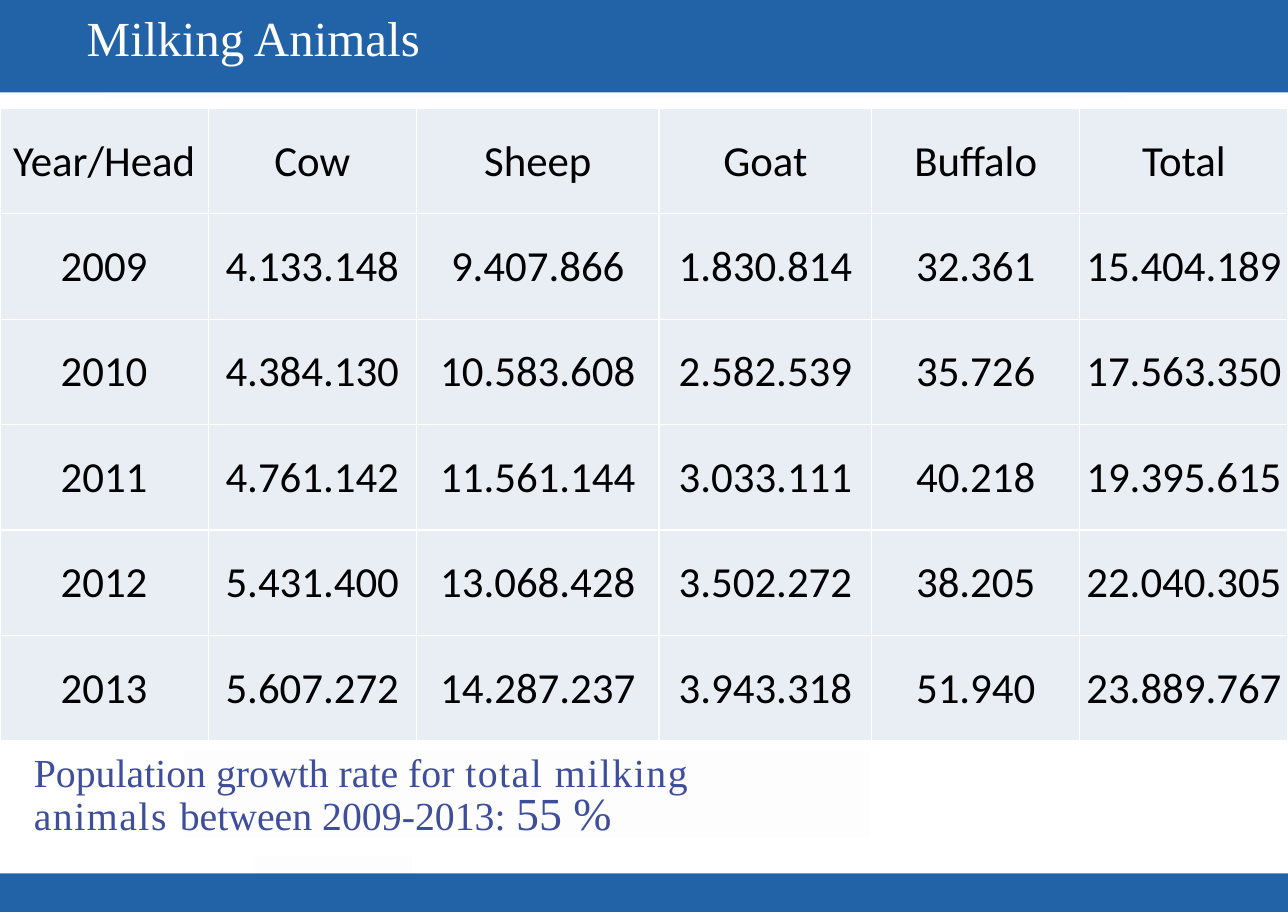
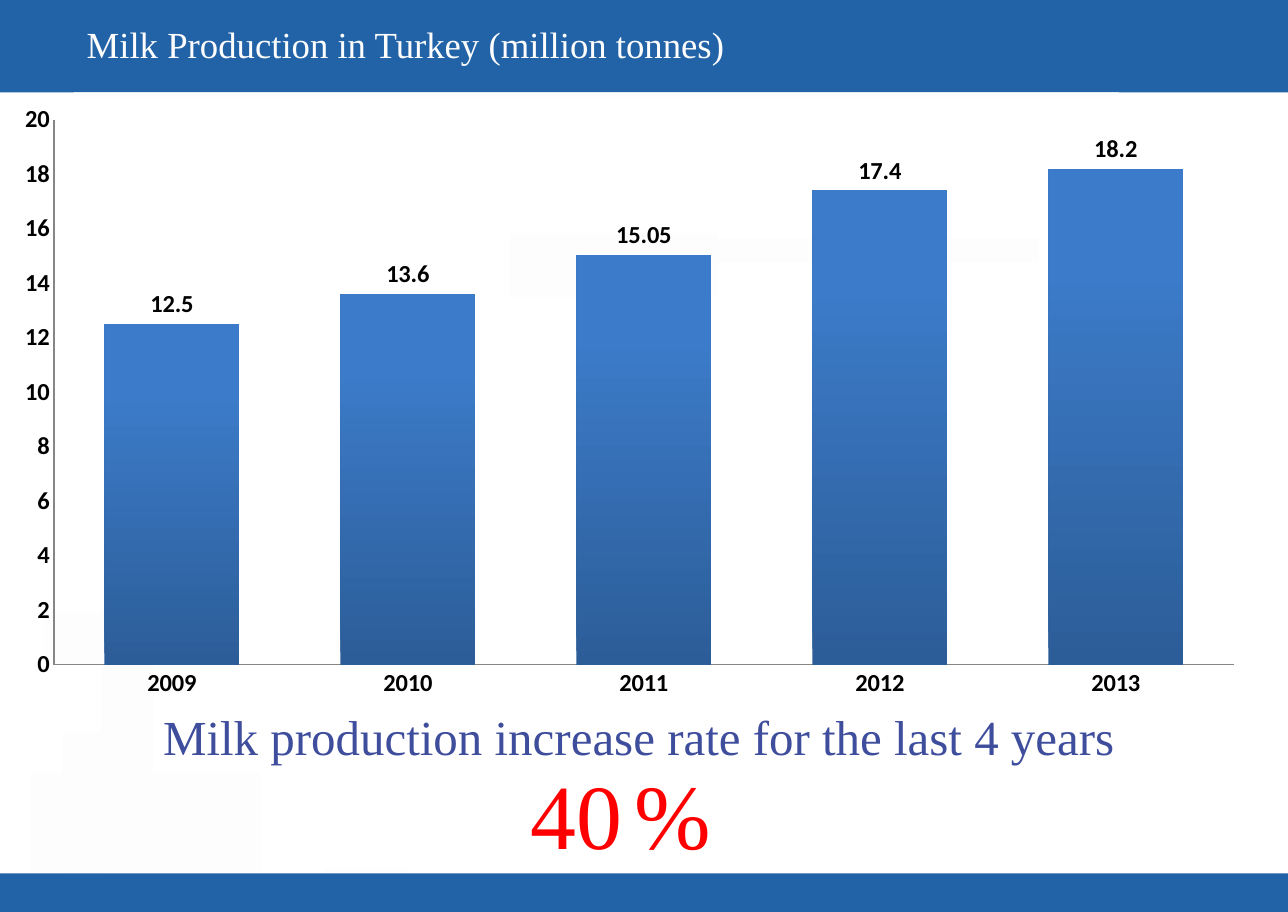
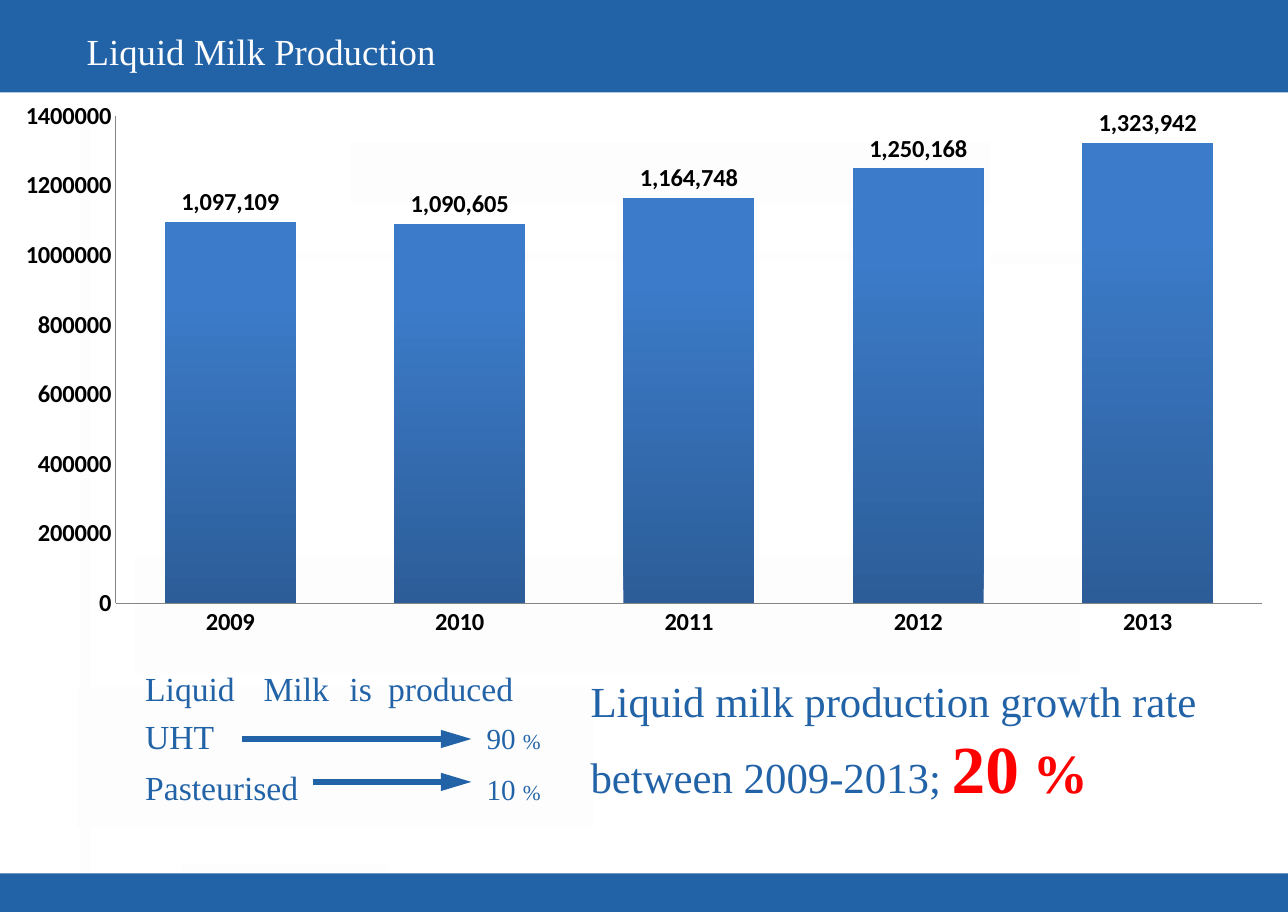
from lxml import etree
from pptx import Presentation
from pptx.chart.data import CategoryChartData
from pptx.dml.color import RGBColor
from pptx.enum.chart import XL_CHART_TYPE, XL_LABEL_POSITION, XL_TICK_MARK
from pptx.enum.shapes import MSO_CONNECTOR, MSO_SHAPE
from pptx.enum.text import MSO_ANCHOR, PP_ALIGN
from pptx.oxml.ns import qn
from pptx.util import Cm, Emu, Pt

RECTANGLE = MSO_SHAPE.RECTANGLE
STRAIGHT = MSO_CONNECTOR.STRAIGHT
COLUMNS = XL_CHART_TYPE.COLUMN_CLUSTERED
OUTSIDE_END = XL_LABEL_POSITION.OUTSIDE_END
NO_TICK = XL_TICK_MARK.NONE
TOP, MIDDLE = MSO_ANCHOR.TOP, MSO_ANCHOR.MIDDLE
LEFT, CENTER = PP_ALIGN.LEFT, PP_ALIGN.CENTER

BLUE = RGBColor(0x22, 0x63, 0xA7)
INDIGO = RGBColor(0x3E, 0x4D, 0x9C)
RED = RGBColor(0xFF, 0x00, 0x00)
BLACK = RGBColor(0x00, 0x00, 0x00)
OFF_WHITE = RGBColor(0xFD, 0xFD, 0xFD)
CELL = RGBColor(0xE9, 0xED, 0xF4)
AXIS = RGBColor(0x86, 0x86, 0x86)
BAR_DARK = RGBColor(0x2C, 0x5D, 0x98)
BAR_LIGHT = RGBColor(0x3C, 0x7B, 0xC9)

SERIF = "Times New Roman"
SANS = "Calibri"
WIDTH, HEIGHT = 29.7, 21.03
HEADER, FOOTER = 2.13, 0.89
YEARS = ["2009", "2010", "2011", "2012", "2013"]

HERD = [
    ["Year/Head", "Cow", "Sheep", "Goat", "Buffalo", "Total"],
    ["2009", "4.133.148", "9.407.866", "1.830.814", "32.361", "15.404.189"],
    ["2010", "4.384.130", "10.583.608", "2.582.539", "35.726", "17.563.350"],
    ["2011", "4.761.142", "11.561.144", "3.033.111", "40.218", "19.395.615"],
    ["2012", "5.431.400", "13.068.428", "3.502.272", "38.205", "22.040.305"],
    ["2013", "5.607.272", "14.287.237", "3.943.318", "51.940", "23.889.767"],
]
HERD_WIDTHS = [4.8, 4.8, 5.6, 4.9, 4.8, 4.8]

HERD_PATCHES = [
    (2.45, 2.17, 23.5, 0.1), (4.26, 17.32, 15.77, 2.01),
    (5.89, 19.74, 3.61, 0.38),
]
MILK_PATCHES = [
    (1.7, 2.13, 24.1, 0.1), (1.45, 16.87, 0.89, 3.25),
    (7.47, 20.04, 1.96, 0.08), (3.53, 17.83, 2.49, 2.29),
    (0.71, 17.83, 1.63, 2.29), (1.02, 14.12, 1.32, 1.19),
    (2.34, 14.05, 1.19, 6.07), (16.54, 5.49, 7.42, 0.56),
    (11.76, 5.38, 4.78, 1.47),
]
LIQUID_PATCHES = [
    (6.81, 5.82, 14.63, 0.2), (8.1, 3.28, 14.73, 1.42),
    (22.86, 5.82, 4.93, 0.25), (1.85, 2.49, 0.25, 13.36),
    (1.85, 19.08, 0.25, 1.04), (4.19, 19.94, 4.75, 0.18),
    (3.12, 12.83, 21.77, 2.69), (1.78, 15.85, 11.89, 3.23),
]


def lengths(*values):
    return [Cm(value) for value in values]


def add_block(page, area, color):
    box = page.shapes.add_shape(RECTANGLE, *lengths(*area))
    box.shadow.inherit = False
    box.fill.solid()
    box.fill.fore_color.rgb = color
    box.line.fill.background()
    return box


def add_bands(page, layout):
    areas = [(0, 0, WIDTH, HEADER), (0, HEIGHT - FOOTER, WIDTH, FOOTER)]
    for number, area in enumerate(areas):
        band = add_block(page, area, BLUE).element
        band.nvSpPr.cNvPr.set("id", str(21 + number))
        layout.shapes.element.insert(2 + number, band)


def style_font(font, name, size, color, bold=False):
    font.name = name
    font.size = Pt(size)
    font.bold = bold
    font.color.rgb = color


def add_span(para, text, size, color, bold=False, tracking=0):
    span = para.add_run()
    span.text = text
    style_font(span.font, SERIF, size, color, bold)
    if tracking:
        span.font._element.set("spc", str(tracking * 100))


def prepare_frame(frame):
    frame.word_wrap = True
    frame.vertical_anchor = TOP
    frame.margin_left = frame.margin_right = 0
    frame.margin_top = frame.margin_bottom = 0


def add_text(page, area, paragraphs, line, gaps=(), indents=(), tabs=()):
    box = page.shapes.add_textbox(*lengths(*area))
    frame = box.text_frame
    prepare_frame(frame)
    for index, spans in enumerate(paragraphs):
        para = frame.paragraphs[0] if index == 0 else frame.add_paragraph()
        para.line_spacing = Pt(line)
        if gaps:
            para.space_before = Pt(gaps[index])
        for values in spans:
            add_span(para, *values)
        properties = para._p.get_or_add_pPr()
        if indents:
            properties.set("marL", str(Cm(indents[index])))
        if tabs:
            stops = etree.SubElement(properties, qn("a:tabLst"))
            for stop in tabs[index]:
                etree.SubElement(stops, qn("a:tab"), pos=str(Cm(stop)), algn="l")


def add_page(deck, layout, title, size, top, patches):
    page = deck.slides.add_slide(layout)
    for patch in patches:
        add_block(page, patch, OFF_WHITE)
    holder = page.shapes.title
    page.shapes.element.append(holder.element)
    holder.left, holder.top, holder.width, holder.height = lengths(2, top, 20, 1)
    prepare_frame(holder.text_frame)
    para = holder.text_frame.paragraphs[0]
    para.alignment = LEFT
    para.line_spacing = Pt(26)
    add_span(para, title, size, OFF_WHITE)
    return page


def add_borders(cell):
    properties = cell._tc.get_or_add_tcPr()
    for side in ("a:lnL", "a:lnR", "a:lnT", "a:lnB"):
        line = etree.SubElement(properties, qn(side), w=str(Pt(1)))
        fill = etree.SubElement(line, qn("a:solidFill"))
        etree.SubElement(fill, qn("a:srgbClr"), val="FFFFFF")


def add_herd_table(page):
    row_height = 2.43
    area = lengths(0, 2.5, WIDTH, row_height * len(HERD))
    table = page.shapes.add_table(len(HERD), len(HERD[0]), *area).table
    table.first_row = table.horz_banding = False
    for column, width in zip(table.columns, HERD_WIDTHS):
        column.width = Cm(width)
    for row, texts in zip(table.rows, HERD):
        row.height = Cm(row_height)
        for cell, text in zip(row.cells, texts):
            add_borders(cell)
            cell.fill.solid()
            cell.fill.fore_color.rgb = CELL
            cell.vertical_anchor = MIDDLE
            cell.margin_left = cell.margin_right = cell.margin_top = Cm(0.02)
            cell.margin_bottom = Emu(0)
            para = cell.text_frame.paragraphs[0]
            para.alignment = CENTER
            span = para.add_run()
            span.text = text
            style_font(span.font, SANS, 28, BLACK)


def add_columns(page, area, values, label_format):
    data = CategoryChartData()
    data.categories = YEARS
    data.add_series("Series 1", values)
    chart = page.shapes.add_chart(COLUMNS, *lengths(*area), data).chart
    chart.has_title = chart.has_legend = False
    style_font(chart.font, SANS, 16, BLACK, True)
    for axis in (chart.category_axis, chart.value_axis):
        axis.has_major_gridlines = False
        axis.major_tick_mark = axis.minor_tick_mark = NO_TICK
        axis.format.line.color.rgb = AXIS
        axis.format.line.width = Pt(0.75)
    plot = chart.plots[0]
    plot.gap_width = 75
    plot.vary_by_categories = False
    plot.has_data_labels = True
    labels = plot.data_labels
    labels.show_value = True
    labels.position = OUTSIDE_END
    labels.number_format = label_format
    labels.number_format_is_linked = False
    fill = plot.series[0].format.fill
    fill.gradient()
    fill.gradient_angle = 90
    dark, light = fill.gradient_stops
    dark.color.rgb, dark.position = BAR_DARK, 0
    light.color.rgb, light.position = BAR_LIGHT, 0.8


def add_arrow(page, start, end, y):
    arrow = page.shapes.add_connector(STRAIGHT, *lengths(start, y, end, y))
    arrow.line.color.rgb = BLUE
    arrow.line.width = Pt(4)
    line = arrow.line._get_or_add_ln()
    etree.SubElement(line, qn("a:tailEnd"), type="triangle", w="med", len="lg")
    etree.SubElement(arrow.element.spPr, qn("a:effectLst"))


def build_herd(deck, layout):
    page = add_page(deck, layout, "Milking Animals", 32, 0.61, HERD_PATCHES)
    add_bands(page, layout)
    add_text(page, (0.78, 17.32, 15.7, 2.6), [[
        ("Population growth rate for ", 26, INDIGO),
        ("total milking animals ", 26, INDIGO, False, 1),
        ("between 2009-2013: ", 26, INDIGO),
        ("55 %", 30, INDIGO),
    ]], 28.9)
    add_herd_table(page)


def build_milk(deck, layout):
    page = add_page(deck, layout, "Milk Production in Turkey (million tonnes)",
                    24, 0.61, MILK_PATCHES)
    add_text(page, (3.76, 16.51, 23.4, 3.5), [
        [("Milk production increase rate for the last 4 years", 32, INDIGO)],
        [("40", 60, RED), (" ", 32, INDIGO), ("%", 60, RED)],
    ], 32, gaps=(0, 35.2), indents=(0, 8.48))
    add_columns(page, (0, 2.13, 29.03, 14.27),
                [12.5, 13.6, 15.05, 17.4, 18.2], "General")


def build_liquid(deck, layout):
    page = add_page(deck, layout, "Liquid Milk Production", 24, 0.76,
                    LIQUID_PATCHES)
    for start, y in ((5.59, 17.04), (7.21, 18.03)):
        add_arrow(page, start, 10.87, y)
    add_text(page, (3.35, 15.42, 10, 3.2), [
        [("Liquid\tMilk\tis\tproduced", 22, BLUE)],
        [("UHT\t", 22, BLUE), ("90 ", 19, BLUE), ("%", 14, BLUE)],
        [("Pasteurised\t", 22, BLUE), ("10 ", 19, BLUE), ("%", 14, BLUE)],
    ], 25.8, gaps=(0, 5.6, 7.5), tabs=((2.73, 4.71, 5.6), (7.87,), (7.87,)))
    add_text(page, (13.62, 14.9, 14.3, 3.8), [[
        ("Liquid milk production growth rate between 2009-2013; ", 28, BLUE),
        ("20", 44, RED, True), (" ", 36, BLUE), ("%", 36, RED, True),
    ]], 52.5)
    add_columns(page, (0, 2.08, WIDTH, 12.88),
                [1097109, 1090605, 1164748, 1250168, 1323942], "#,##0")


def main():
    deck = Presentation()
    deck.slide_width, deck.slide_height = lengths(WIDTH, HEIGHT)
    layout = deck.slide_layouts[5]
    build_herd(deck, layout)
    build_milk(deck, layout)
    build_liquid(deck, layout)
    deck.save("out.pptx")


if __name__ == "__main__":
    main()
